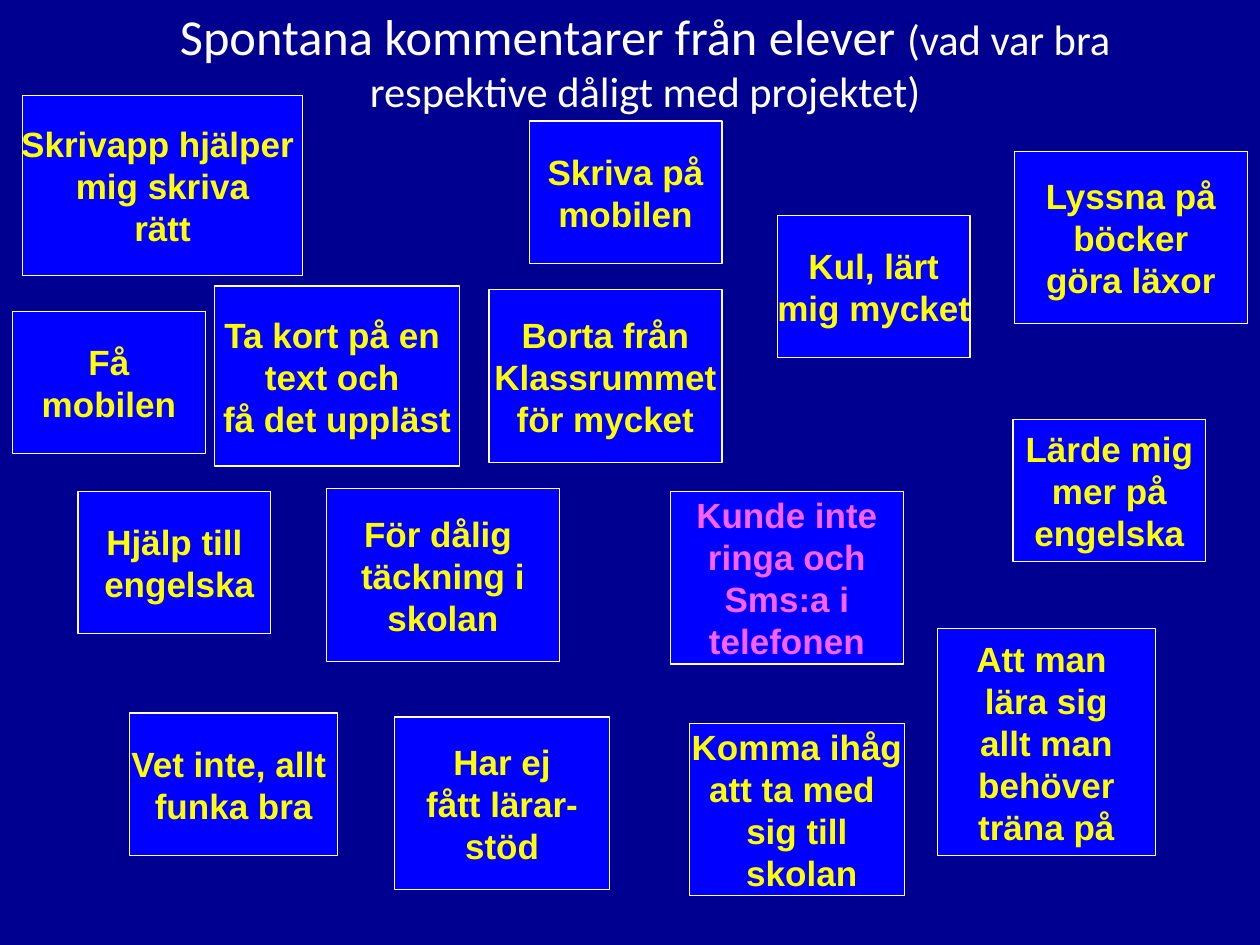
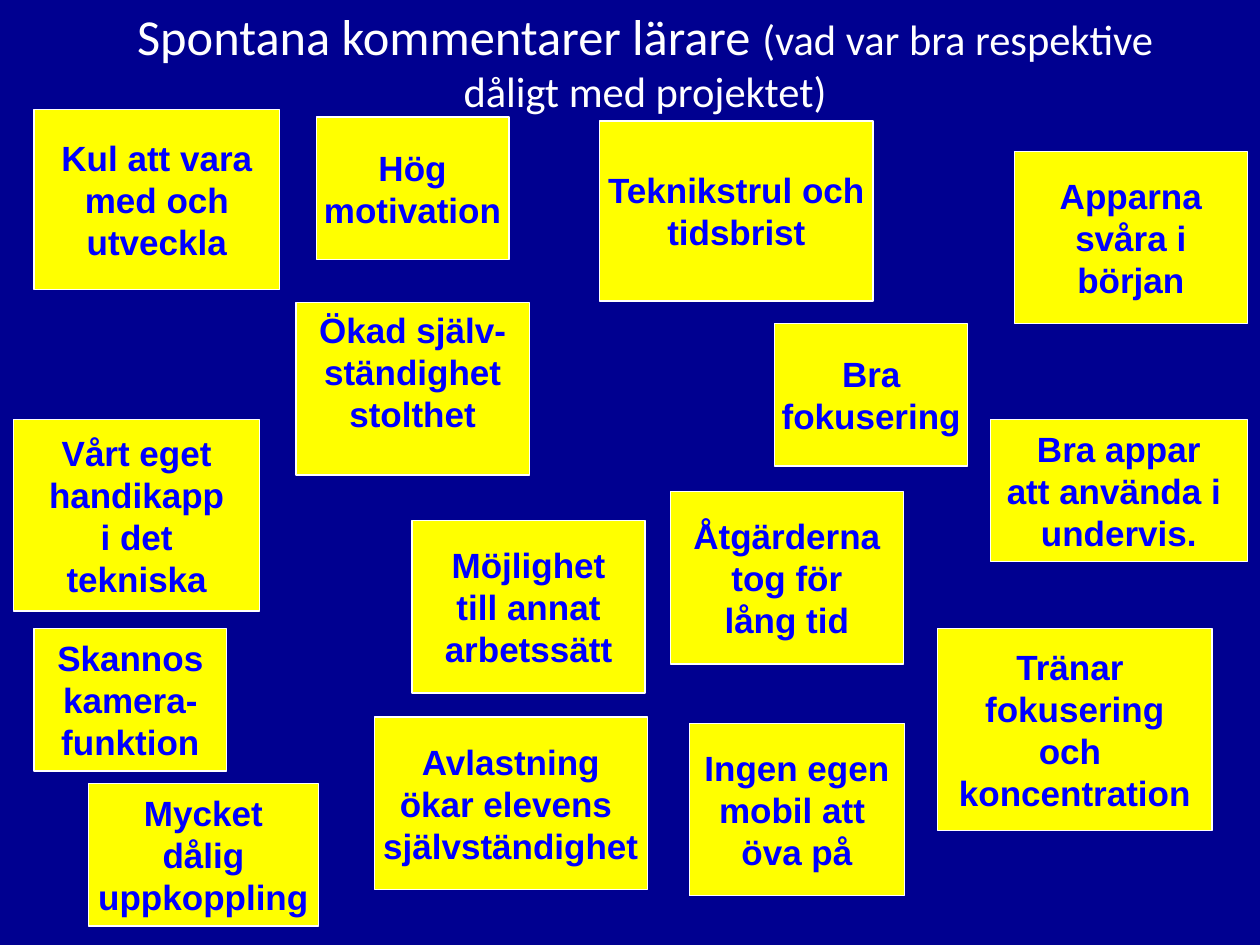
from dataclasses import dataclass

from pptx import Presentation
from pptx.dml.color import RGBColor
from pptx.enum.shapes import MSO_SHAPE
from pptx.enum.text import MSO_ANCHOR, PP_ALIGN
from pptx.util import Inches, Pt

RECTANGLE = MSO_SHAPE.RECTANGLE
CENTER = PP_ALIGN.CENTER
MIDDLE = MSO_ANCHOR.MIDDLE
TOP = MSO_ANCHOR.TOP


@dataclass(frozen=True)
class Theme:
    background: str = "000090"
    white: str = "FFFFFF"
    blue: str = "0000FF"
    yellow: str = "FFFF00"
    pink: str = "F860FF"
    title_font: str = "Calibri"
    note_font: str = "Arial"
    title_size: float = 28.8
    subtitle_size: float = 24.3
    note_size: float = 20
    border: float = 0.75


THEME = Theme()
TITLE_BOX = (0.62, 0, 9, 0.96)
SUBTITLE = "(vad var bra respektive dåligt med projektet)"

SMALL = (1.53, 1.13)
NARROW = (1.71, 1.37)
MEDIUM = (1.85, 1.37)
LARGE = (1.95, 1.43)
WIDE = (2.17, 1.37)

STUDENT_NOTES = [
    (0.62, 3.9, SMALL, ["Hjälp till", " engelska"]),
    (1.03, 5.66, (1.65, 1.13), ["Vet inte, allt ", "funka bra"]),
    (1.7, 2.27, LARGE, ["Ta kort på en ", "text och ", "få det uppläst"]),
    (4.2, 0.96, SMALL, ["Skriva på", "mobilen"]),
    (6.17, 1.71, SMALL, ["Kul, lärt", "mig mycket"]),
    (8.04, 3.33, SMALL, ["Lärde mig", "mer på", "engelska"]),
    (7.44, 4.99, (1.73, 1.8), ["Att man ", "lära sig", "allt man", "behöver", "träna på"]),
    (5.47, 5.74, NARROW, ["Komma ihåg", "att ta med ", "sig till", " skolan"]),
    (3.13, 5.69, NARROW, ["Har ej", "fått lärar-", "stöd"]),
    (3.88, 2.3, MEDIUM, ["Borta från", "Klassrummet", "för mycket"]),
    (2.59, 3.88, MEDIUM, ["För dålig ", "täckning i", "skolan"]),
    (5.32, 3.9, MEDIUM, ["Kunde inte", "ringa och", "Sms:a i", "telefonen"],
     {"color": THEME.pink}),
    (8.05, 1.2, MEDIUM, ["Lyssna på", "böcker", "göra läxor"]),
    (0.18, 0.76, (2.22, 1.43), ["Skrivapp hjälper ", "mig skriva", "rätt"]),
    (0.1, 2.47, SMALL, ["Få", "mobilen"]),
]

TEACHER_NOTES = [
    (0.27, 4.99, SMALL, ["Skannos", "kamera-", "funktion"]),
    (0.7, 6.22, (1.83, 1.13), ["Mycket", "dålig", "uppkoppling"]),
    (0.11, 3.33, (1.95, 1.52), ["Vårt eget", "handikapp", "i det", "tekniska"]),
    (2.51, 0.93, SMALL, ["Hög", "motivation"]),
    (6.15, 2.57, SMALL, ["Bra", "fokusering"]),
    (7.86, 3.33, (2.04, 1.13), ["Bra appar", "att använda i ", "undervis."]),
    (7.44, 4.99, (2.18, 1.6), ["Tränar ", "fokusering", "och ", "koncentration"]),
    (5.47, 5.74, NARROW, ["Ingen egen", "mobil att ", "öva på"]),
    (2.97, 5.69, WIDE, ["Avlastning", "ökar elevens ", "självständighet"]),
    (2.35, 2.4, MEDIUM, ["Ökad själv-", "ständighet", "stolthet"], {"anchor": TOP}),
    (3.27, 4.13, MEDIUM, ["Möjlighet", "till annat", "arbetssätt"]),
    (5.32, 3.9, MEDIUM, ["Åtgärderna", "tog för", "lång tid"]),
    (8.05, 1.2, MEDIUM, ["Apparna", "svåra i", "början"]),
    (0.27, 0.87, LARGE, ["Kul att vara", "med och", "utveckla"]),
    (4.76, 0.96, (2.17, 1.43), ["Teknikstrul och", "tidsbrist"]),
]

SLIDES = [
    ("Spontana kommentarer från elever ", STUDENT_NOTES, THEME.blue, THEME.yellow),
    ("Spontana kommentarer lärare ", TEACHER_NOTES, THEME.yellow, THEME.blue),
]


def write_text(shape, paragraphs, *, font, color, bold=False, wrap=True, anchor=MIDDLE):
    frame = shape.text_frame
    frame.word_wrap = wrap
    frame.vertical_anchor = anchor
    for index, runs in enumerate(paragraphs):
        paragraph = frame.paragraphs[0] if index == 0 else frame.add_paragraph()
        paragraph.alignment = CENTER
        for text, size in runs:
            run = paragraph.add_run()
            run.text = text
            run.font.name = font
            run.font.size = Pt(size)
            run.font.bold = bold
            run.font.color.rgb = RGBColor.from_string(color)


def add_title(slide, title):
    box = slide.shapes.add_textbox(*map(Inches, TITLE_BOX))
    runs = [(title, THEME.title_size), (SUBTITLE, THEME.subtitle_size)]
    write_text(box, [runs], font=THEME.title_font, color=THEME.white)


def add_note(slide, left, top, size, lines, fill, text_format):
    note = slide.shapes.add_shape(RECTANGLE, *map(Inches, (left, top, *size)))
    note.shadow.inherit = False
    note.fill.solid()
    note.fill.fore_color.rgb = RGBColor.from_string(fill)
    note.line.color.rgb = RGBColor.from_string(THEME.white)
    note.line.width = Pt(THEME.border)
    paragraphs = [[(line, THEME.note_size)] for line in lines]
    write_text(note, paragraphs, font=THEME.note_font, bold=True, wrap=False, **text_format)


def main():
    presentation = Presentation()
    presentation.slide_width = Inches(10)
    presentation.slide_height = Inches(7.5)
    blank_layout = presentation.slide_layouts[6]
    for title, notes, fill, color in SLIDES:
        slide = presentation.slides.add_slide(blank_layout)
        slide.background.fill.solid()
        slide.background.fill.fore_color.rgb = RGBColor.from_string(THEME.background)
        add_title(slide, title)
        for left, top, size, lines, *changes in notes:
            text_format = {"color": color}
            for change in changes:
                text_format.update(change)
            add_note(slide, left, top, size, lines, fill, text_format)
    presentation.save("out.pptx")


if __name__ == "__main__":
    main()
